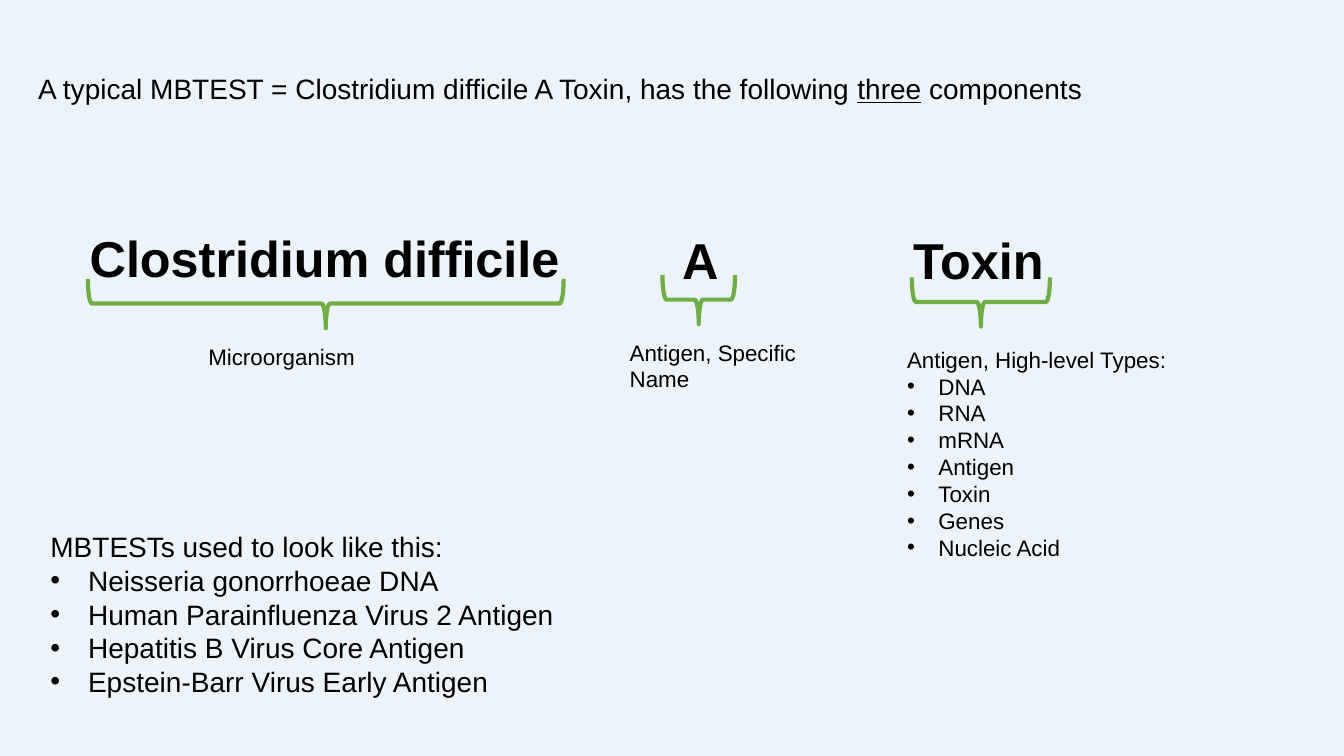
from dataclasses import dataclass

import pptx
import pptx.dml.color
import pptx.enum.shapes
import pptx.enum.text
import pptx.util
from lxml import etree
from pptx.oxml.ns import qn

Cm = pptx.util.Cm
RGBColor = pptx.dml.color.RGBColor

BACKGROUND = RGBColor(0xEC, 0xF4, 0xFA)
TEXT = RGBColor(0x00, 0x00, 0x00)
BRACE = RGBColor(0x70, 0xAD, 0x47)
FONT = "Arial"
BRACE_DEPTH = 1.24


@dataclass(frozen=True)
class Run:
    text: str
    underline: bool = False


@dataclass(frozen=True)
class TextBlock:
    left: float
    top: float
    width: float
    height: float
    size: int
    runs: tuple[Run, ...]
    bullets: tuple[str, ...] = ()
    indent: float = 0
    bold: bool = False


@dataclass(frozen=True)
class Brace:
    center_x: float
    center_y: float
    span: float


BRACES = (
    Brace(8.21, 7.65, 11.99),
    Brace(17.61, 7.55, 1.83),
    Brace(24.72, 7.61, 3.48),
)

TEXT_BLOCKS = (
    TextBlock(0.71, 1.68, 28.45, 1.12, 20, (
        Run("A typical MBTEST = Clostridium difficile A Toxin, has the following "),
        Run("three", underline=True),
        Run(" components"),
    )),
    TextBlock(2.01, 5.61, 12.62, 1.8, 36, (Run("Clostridium difficile"),), bold=True),
    TextBlock(16.94, 5.64, 1.42, 1.8, 36, (Run("A"),), bold=True),
    TextBlock(22.76, 5.66, 4.8, 1.8, 36, (Run("Toxin"),), bold=True),
    TextBlock(5, 8.51, 4.98, 0.94, 16, (Run("Microorganism"),)),
    TextBlock(15.62, 8.41, 5.84, 1.63, 16, (Run("Antigen, Specific Name"),)),
    TextBlock(
        22.61, 8.59, 8.31, 5.74, 16, (Run("Antigen, High-level Types:"),),
        ("DNA", "RNA", "mRNA", "Antigen", "Toxin", "Genes", "Nucleic Acid"), 0.79,
    ),
    TextBlock(
        1.02, 13.23, 14, 4.52, 20, (Run("MBTESTs used to look like this:"),),
        (
            "Neisseria gonorrhoeae DNA",
            "Human Parainfluenza Virus 2 Antigen",
            "Hepatitis B Virus Core Antigen",
            "Epstein-Barr Virus Early Antigen",
        ),
        0.95,
    ),
)


def add_run(paragraph: pptx.text.text._Paragraph, run: Run, block: TextBlock) -> None:
    text_run = paragraph.add_run()
    text_run.text = run.text
    font = text_run.font
    font.name = FONT
    font.size = pptx.util.Pt(block.size)
    font.bold = block.bold
    font.underline = run.underline
    font.color.rgb = TEXT


def set_bullet(paragraph: pptx.text.text._Paragraph, indent: float) -> None:
    properties = paragraph._p.get_or_add_pPr()
    properties.set("marL", str(Cm(indent)))
    properties.set("indent", str(-Cm(indent)))
    etree.SubElement(properties, qn("a:buFont")).set("typeface", FONT)
    etree.SubElement(properties, qn("a:buChar")).set("char", "•")


def add_text_block(slide: pptx.slide.Slide, block: TextBlock) -> None:
    shape = slide.shapes.add_textbox(
        Cm(block.left), Cm(block.top), Cm(block.width), Cm(block.height)
    )
    frame = shape.text_frame
    frame.word_wrap = True
    frame.auto_size = pptx.enum.text.MSO_AUTO_SIZE.SHAPE_TO_FIT_TEXT
    for run in block.runs:
        add_run(frame.paragraphs[0], run, block)
    for bullet in block.bullets:
        paragraph = frame.add_paragraph()
        set_bullet(paragraph, block.indent)
        add_run(paragraph, Run(bullet), block)


def add_brace(slide: pptx.slide.Slide, brace: Brace) -> None:
    shape = slide.shapes.add_shape(
        pptx.enum.shapes.MSO_SHAPE.LEFT_BRACE,
        Cm(brace.center_x - BRACE_DEPTH / 2),
        Cm(brace.center_y - brace.span / 2),
        Cm(BRACE_DEPTH),
        Cm(brace.span),
    )
    shape.rotation = 270
    shape.shadow.inherit = False
    shape.fill.background()
    shape.line.color.rgb = BRACE
    shape.line.width = pptx.util.Pt(3)


def main() -> None:
    presentation = pptx.Presentation()
    presentation.slide_width = Cm(33.87)
    presentation.slide_height = Cm(19.05)
    slide = presentation.slides.add_slide(presentation.slide_layouts[6])
    slide.background.fill.solid()
    slide.background.fill.fore_color.rgb = BACKGROUND
    for brace in BRACES:
        add_brace(slide, brace)
    for block in TEXT_BLOCKS:
        add_text_block(slide, block)
    presentation.save("out.pptx")


if __name__ == "__main__":
    main()
